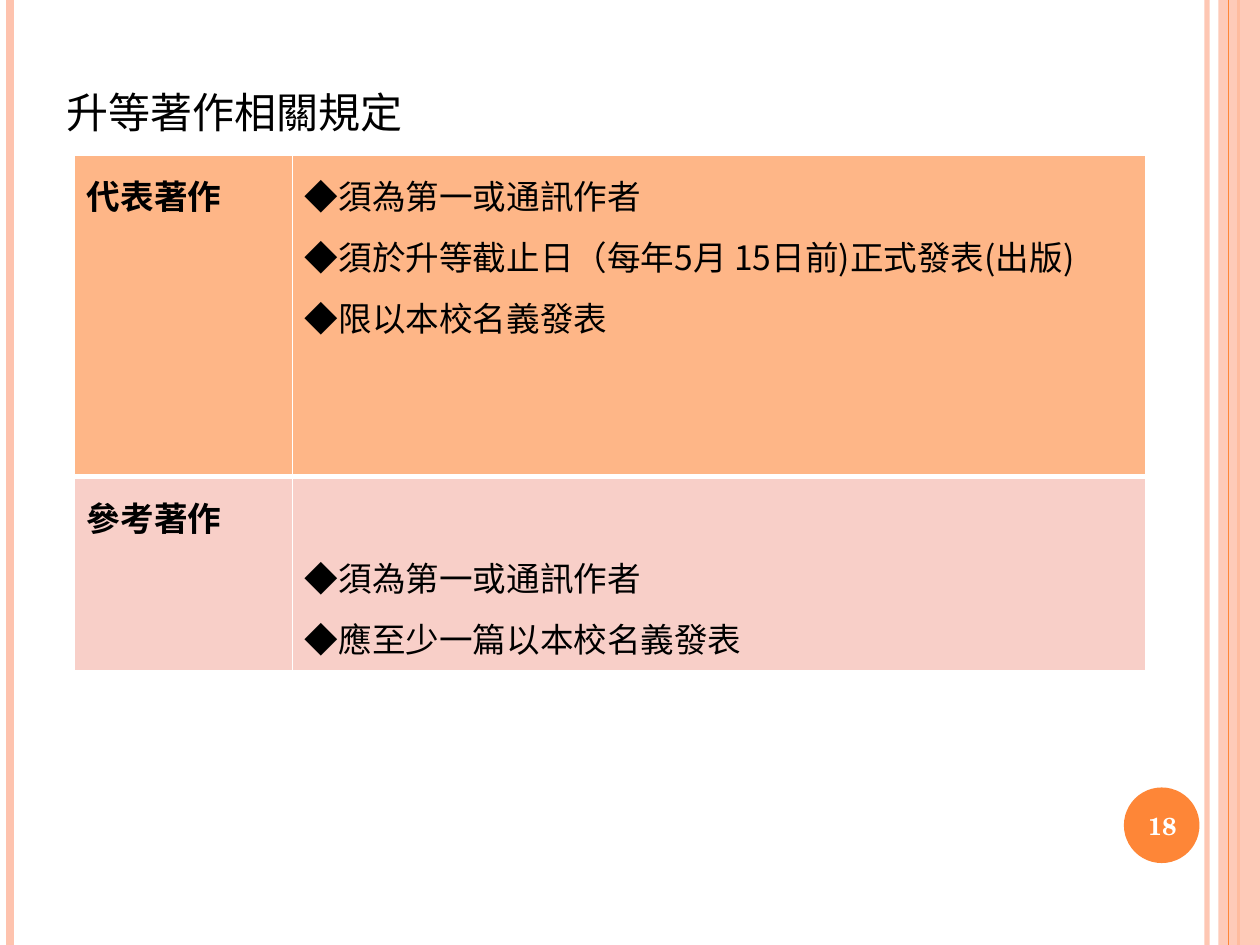
from dataclasses import dataclass

from lxml import etree
from pptx import Presentation
from pptx.dml.color import RGBColor
from pptx.enum.shapes import MSO_CONNECTOR, MSO_SHAPE
from pptx.enum.text import MSO_ANCHOR, MSO_AUTO_SIZE, PP_ALIGN
from pptx.oxml.ns import qn
from pptx.util import Inches, Pt

STRAIGHT = MSO_CONNECTOR.STRAIGHT
RECTANGLE, OVAL = MSO_SHAPE.RECTANGLE, MSO_SHAPE.OVAL
TOP, MIDDLE, BOTTOM = MSO_ANCHOR.TOP, MSO_ANCHOR.MIDDLE, MSO_ANCHOR.BOTTOM
LEFT, CENTER = PP_ALIGN.LEFT, PP_ALIGN.CENTER
TITLE_ONLY = 5

WIDTH, HEIGHT = 10, 7.5
CJK, SERIF = "Noto Sans CJK SC", "TeX Gyre Schola"
COLORS = {
    "peach": "FEC3AE",
    "orange": "FE8637",
    "apricot": "FEB687",
    "pink": "F8CFC8",
    "black": "000000",
    "white": "FFFFFF",
}
COLUMN_WIDTHS = (1.73, 6.77)
LINE_HEIGHT = 0.48
CELL_MARGIN = 0.05


@dataclass
class Stripe:
    x: float
    color: str
    weight: float
    opacity: int = 100


@dataclass
class Rule:
    heading: str
    items: list[str]
    color: str
    height: float
    lines_above: int = 0


EDGE_STRIPES = [
    Stripe(9.58, "peach", 3, 93),
    Stripe(0.08, "peach", 4.5),
    Stripe(9.83, "orange", 1.5),
]
BAND_STRIPE = Stripe(9.75, "orange", 0.75)
RULES = [
    Rule(
        "代表著作",
        ["◆須為第一或通訊作者",
         "◆須於升等截止日（每年5月 15日前)正式發表(出版)",
         "◆限以本校名義發表"],
        "apricot", 2.55,
    ),
    Rule(
        "參考著作",
        ["◆須為第一或通訊作者", "◆應至少一篇以本校名義發表"],
        "pink", 1.54, lines_above=1,
    ),
]


def rgb(name: str) -> RGBColor:
    return RGBColor.from_string(COLORS[name])


def set_opacity(shape, percent: int) -> None:
    color = next(shape._element.spPr.iter(qn("a:srgbClr")))
    etree.SubElement(color, qn("a:alpha"), val=str(percent * 1000))


def draw_stripe(slide, stripe: Stripe) -> None:
    x = Inches(stripe.x)
    line = slide.shapes.add_connector(STRAIGHT, x, 0, x, Inches(HEIGHT))
    line.line.color.rgb = rgb(stripe.color)
    line.line.width = Pt(stripe.weight)
    if stripe.opacity < 100:
        set_opacity(line, stripe.opacity)
    etree.SubElement(line._element.spPr, qn("a:effectLst"))


def draw_block(slide, kind, box: tuple, color: str):
    block = slide.shapes.add_shape(kind, *map(Inches, box))
    block.shadow.inherit = False
    block.fill.solid()
    block.fill.fore_color.rgb = rgb(color)
    block.line.fill.background()
    return block


def write(frame, lines: list[str], size: float, font: str = CJK,
          color: str = "black", bold: bool = False, align=LEFT,
          caps: str = "small") -> None:
    frame.text = "\n".join(lines)
    frame.word_wrap = True
    for paragraph in frame.paragraphs:
        paragraph.alignment = align
        for run in paragraph.runs:
            run.font.size = Pt(size)
            run.font.bold = bold
            run.font.name = font
            run.font.color.rgb = rgb(color)
            run.font._element.set("cap", caps)
            east_asian = etree.Element(qn("a:ea"), typeface=font)
            run.font._element.find(qn("a:latin")).addnext(east_asian)


def set_borders(cell, top: float, bottom: float) -> None:
    """White edges; top and bottom weights are in points."""
    properties = cell._tc.get_or_add_tcPr()
    weights = {"lnL": 1, "lnR": 1, "lnT": top, "lnB": bottom}
    for position, (edge, weight) in enumerate(weights.items()):
        line = etree.Element(qn(f"a:{edge}"), w=str(Pt(weight)))
        fill = etree.SubElement(line, qn("a:solidFill"))
        etree.SubElement(fill, qn("a:srgbClr"), val=COLORS["white"])
        properties.insert(position, line)


def draw_rules(slide, rules: list[Rule]) -> None:
    table = slide.shapes.add_table(
        len(rules), len(COLUMN_WIDTHS), Inches(0.59), Inches(1.23),
        Inches(sum(COLUMN_WIDTHS)), Inches(sum(rule.height for rule in rules)),
    ).table
    table.first_row = table.horz_banding = False
    for column, width in zip(table.columns, COLUMN_WIDTHS):
        column.width = Inches(width)
    for index, rule in enumerate(rules):
        table.rows[index].height = Inches(rule.height)
        heading, items = table.rows[index].cells
        write(heading.text_frame, [rule.heading], 24, bold=True)
        write(items.text_frame, rule.items, 24)
        for cell in (heading, items):
            cell.vertical_anchor = TOP
            cell.margin_top = cell.margin_bottom = Inches(CELL_MARGIN)
            cell.fill.solid()
            cell.fill.fore_color.rgb = rgb(rule.color)
            set_borders(cell, 3 if index == 1 else 1, 3 if index == 0 else 1)
        items.margin_top = Inches(CELL_MARGIN + rule.lines_above * LINE_HEIGHT)


def draw_title(slide, text: str) -> None:
    title = slide.shapes.title
    title.left, title.top = Inches(0.43), Inches(0.36)
    title.width, title.height = Inches(8.17), Inches(0.79)
    write(title.text_frame, [text], 30)
    title.text_frame.auto_size = MSO_AUTO_SIZE.NONE
    title.text_frame.vertical_anchor = BOTTOM


def draw_page_number(slide, number: str) -> None:
    draw_block(slide, OVAL, (8.92, 6.25, 0.6, 0.6), "orange")
    label = slide.shapes.add_textbox(*map(Inches, (8.89, 6.27, 0.67, 0.57)))
    write(label.text_frame, [number], 14, SERIF, "white", True, CENTER, "none")
    label.text_frame.vertical_anchor = MIDDLE


def main() -> None:
    deck = Presentation()
    deck.slide_width, deck.slide_height = Inches(WIDTH), Inches(HEIGHT)
    slide = deck.slides.add_slide(deck.slide_layouts[TITLE_ONLY])
    for stripe in EDGE_STRIPES:
        draw_stripe(slide, stripe)
    band = draw_block(slide, RECTANGLE, (9.67, 0, 0.33, HEIGHT), "peach")
    set_opacity(band, 87)
    draw_stripe(slide, BAND_STRIPE)
    draw_title(slide, "升等著作相關規定")
    draw_rules(slide, RULES)
    draw_page_number(slide, "18")
    deck.save("out.pptx")


if __name__ == "__main__":
    main()
